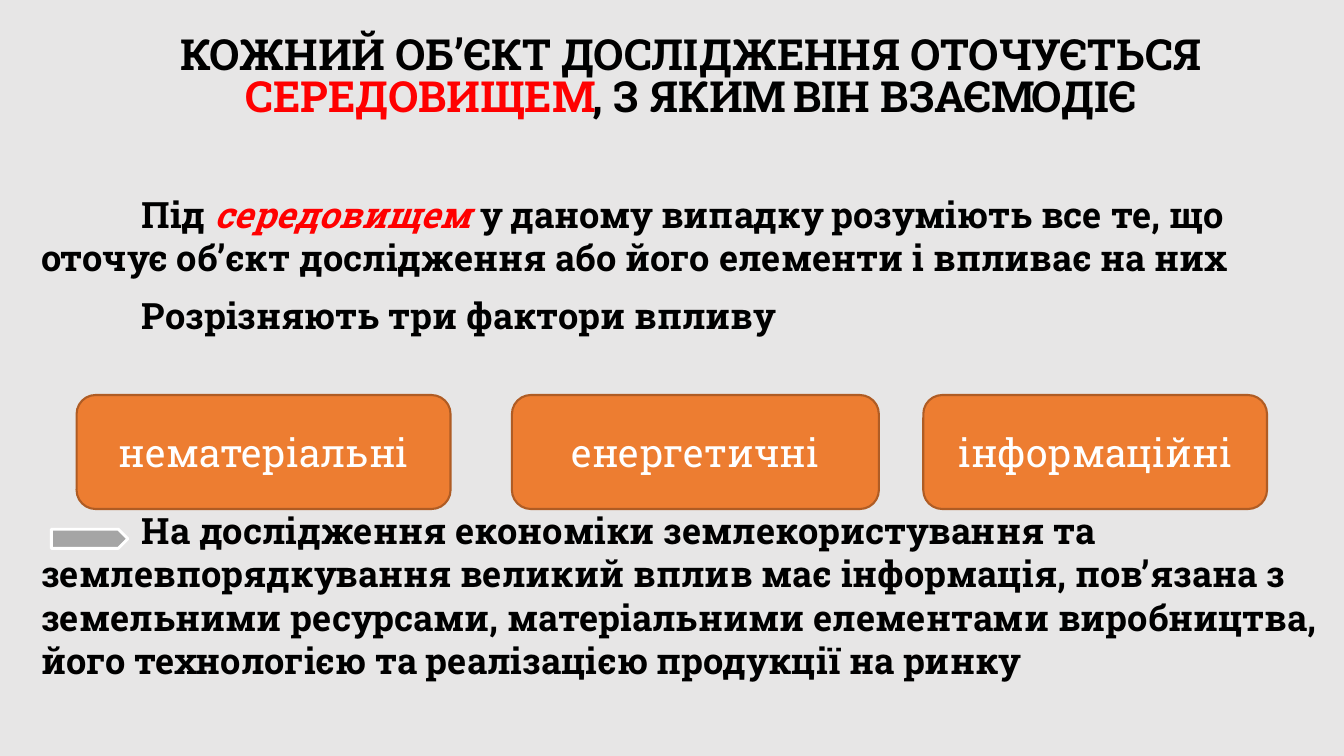
from pptx import Presentation
from pptx.dml.color import RGBColor
from pptx.enum import shapes, text
from pptx.util import Pt

BACKGROUND = RGBColor(0xE7, 0xE6, 0xE6)
BLACK = RGBColor(0, 0, 0)
RED = RGBColor(0xFF, 0, 0)
WHITE = RGBColor(0xFF, 0xFF, 0xFF)
ORANGE = RGBColor(0xED, 0x7D, 0x31)
BROWN = RGBColor(0xAF, 0x5C, 0x24)
GRAY = RGBColor(0xA5, 0xA5, 0xA5)
FONT = "Roboto Slab"


def write(paragraph, words, size, color=BLACK, bold=True, italic=False):
    run = paragraph.add_run()
    run.text = words
    font = run.font
    font.name, font.size, font.bold, font.italic = FONT, Pt(size), bold, italic
    font.color.rgb = color


def text_frame(slide, left, top, width, height, anchor):
    frame = slide.shapes.add_textbox(Pt(left), Pt(top), Pt(width), Pt(height)).text_frame
    frame.word_wrap = True
    frame.vertical_anchor = anchor
    return frame


def outlined_shape(slide, preset, box, fill, line, line_width):
    shape = slide.shapes.add_shape(preset, *map(Pt, box))
    shape.shadow.inherit = False
    shape.fill.solid()
    shape.fill.fore_color.rgb = fill
    shape.line.color.rgb = line
    shape.line.width = Pt(line_width)
    return shape


def heading(slide, left, top, width, height):
    frame = text_frame(slide, left, top, width, height, text.MSO_ANCHOR.MIDDLE)
    title = frame.paragraphs[0]
    title.alignment = text.PP_ALIGN.CENTER
    title.line_spacing = 0.81
    write(title, "КОЖНИЙ ОБ’ЄКТ ДОСЛІДЖЕННЯ ОТОЧУЄТЬСЯ ", 30.6)
    write(title, "СЕРЕДОВИЩЕМ", 30.6, color=RED)
    write(title, ", З ЯКИМ ВІН ВЗАЄМОДІЄ", 30.6)


def explanation(slide, left, top, width, height, statements):
    frame = text_frame(slide, left, top, width, height, text.MSO_ANCHOR.TOP)
    for index, statement in enumerate(statements):
        paragraph = frame.paragraphs[0] if index == 0 else frame.add_paragraph()
        paragraph.space_before = Pt(10 if index else 0)
        paragraph.line_spacing = 1.0
        paragraph._p.get_or_add_pPr().set("indent", str(Pt(72)))
        for words, style in statement:
            write(paragraph, words, 25.9, **style)


def factors(slide, left, top, height):
    for name, offset, width in (
        ("нематеріальні", 0, 267.1),
        ("енергетичні", 311, 262.1),
        ("інформаційні", 604.8, 245.5),
    ):
        card = outlined_shape(slide, shapes.MSO_SHAPE.ROUNDED_RECTANGLE,
                              (left + offset, top, width, height), ORANGE, BROWN, 1.5)
        card.text_frame.word_wrap = True
        card.text_frame.vertical_anchor = text.MSO_ANCHOR.MIDDLE
        label = card.text_frame.paragraphs[0]
        label.alignment = text.PP_ALIGN.CENTER
        write(label, name, 28, color=WHITE, bold=False)


def pointer(slide, left, top, width, height):
    outlined_shape(slide, shapes.MSO_SHAPE.PENTAGON,
                   (left, top, width, height), GRAY, WHITE, 2)


def main():
    deck = Presentation()
    deck.slide_width, deck.slide_height = Pt(960), Pt(540)
    slide = deck.slides.add_slide(deck.slide_layouts[6])
    slide.background.fill.solid()
    slide.background.fill.fore_color.rgb = BACKGROUND

    heading(slide, 36.7, 17.3, 913.7, 78.5)
    explanation(slide, 22.3, 133.5, 928, 125, [
        [("Під ", {}),
         ("середовищем ", {"color": RED, "italic": True}),
         ("у даному випадку розуміють все те, що оточує об’єкт дослідження "
          "або його елементи і впливає на них", {})],
        [("Розрізняють три фактори впливу", {})],
    ])
    explanation(slide, 22.3, 359.3, 928, 150, [
        [("На дослідження економіки землекористування та землевпорядкування "
          "великий вплив має інформація, пов’язана з земельними ресурсами, "
          "матеріальними елементами виробництва, його технологією та "
          "реалізацією продукції на ринку", {})],
    ])
    factors(slide, 54.7, 282.2, 81.4)
    pointer(slide, 36.7, 378, 54.7, 13.7)
    deck.save("out.pptx")


if __name__ == "__main__":
    main()
